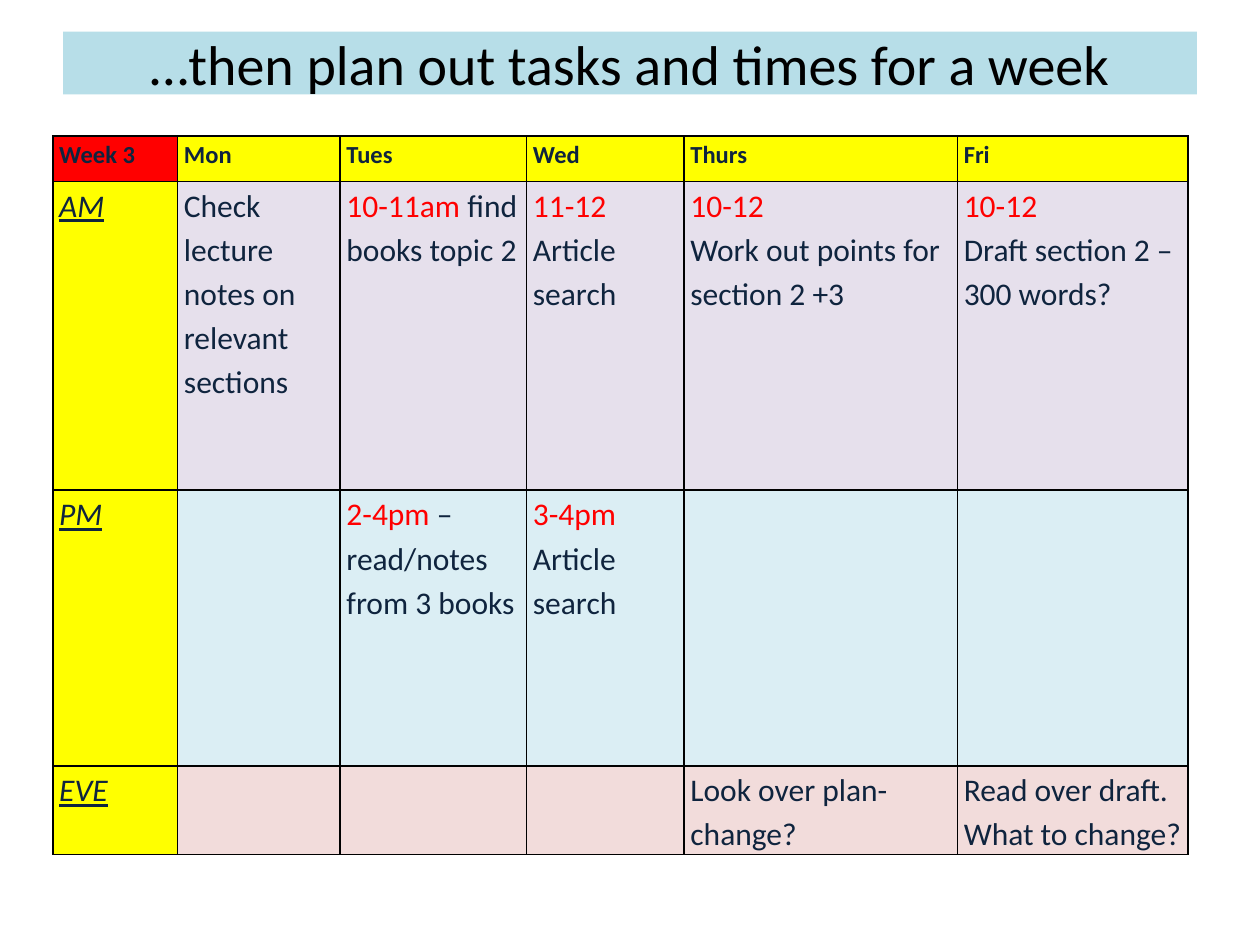
from dataclasses import dataclass

from lxml import etree
from pptx import Presentation
from pptx.dml.color import RGBColor
from pptx.enum import text
from pptx.oxml import ns
from pptx.util import Inches, Pt


@dataclass(frozen=True)
class Theme:
    font: str = "Calibri"
    title_size: int = 32
    head_size: int = 14
    body_size: int = 18
    border_width: int = 1
    title_fill: str = "B7DEE8"
    black: str = "000000"
    ink: str = "0F243E"
    time: str = "FF0000"
    corner: str = "FF0000"
    label: str = "FFFF00"
    morning: str = "E6E0EC"
    afternoon: str = "DBEEF4"
    evening: str = "F2DCDB"


theme = Theme()


def add_span(para, words, size=theme.body_size, color=theme.ink,
             bold=False, italic=False, underline=False):
    span = para.add_run()
    span.text = words
    font = span.font
    font.name = theme.font
    font.size = Pt(size)
    font.color.rgb = RGBColor.from_string(color)
    font.bold, font.italic, font.underline = bold, italic, underline


def add_borders(cell):
    """Draw all four sides; call before the fill, which must follow them in the XML."""
    properties = cell._tc.get_or_add_tcPr()
    for side in ("lnL", "lnR", "lnT", "lnB"):
        line = etree.SubElement(properties, ns.qn(f"a:{side}"),
                                w=str(Pt(theme.border_width)))
        fill = etree.SubElement(line, ns.qn("a:solidFill"))
        etree.SubElement(fill, ns.qn("a:srgbClr"), val=theme.black)


deck = Presentation()
deck.slide_width, deck.slide_height = Inches(10), Inches(7.5)
page = deck.slides.add_slide(deck.slide_layouts[5])

# Title
title = page.shapes.title
title.left, title.top = Inches(0.5), Inches(0.25)
title.width, title.height = Inches(9), Inches(0.5)
title.fill.solid()
title.fill.fore_color.rgb = RGBColor.from_string(theme.title_fill)
frame = title.text_frame
frame.auto_size = text.MSO_AUTO_SIZE.NONE
frame.vertical_anchor = text.MSO_ANCHOR.MIDDLE
frame.paragraphs[0].alignment = text.PP_ALIGN.CENTER
add_span(frame.paragraphs[0], "…then plan out tasks and times for a week",
         size=theme.title_size, color=theme.black)

# Week plan: a cell is a list of paragraphs, a paragraph is a (time, task) pair
days = ["Week 3", "Mon", "Tues", "Wed", "Thurs", "Fri"]
sessions = [
    ("AM", theme.morning, [
        [("", "Check lecture notes on relevant sections")],
        [("10-11am ", "find books topic 2")],
        [("11-12", ""), ("", "Article search")],
        [("10-12", ""), ("", "Work out points for section 2 +3")],
        [("10-12", ""), ("", "Draft section 2 – 300 words?")],
    ]),
    ("PM", theme.afternoon, [
        [],
        [("2-4pm ", "–read/notes from 3 books")],
        [("3-4pm", ""), ("", "Article search")],
        [],
        [],
    ]),
    ("EVE", theme.evening, [
        [],
        [],
        [],
        [("", "Look over plan-change?")],
        [("", "Read over draft."), ("", "What to change?")],
    ]),
]
column_widths = [0.99, 1.29, 1.48, 1.25, 2.17, 1.83]
row_heights = [0.36, 2.45, 2.19, 0.7]

plan = page.shapes.add_table(
    len(row_heights), len(column_widths), Inches(0.42), Inches(1.08),
    Inches(sum(column_widths)), Inches(sum(row_heights))).table
for column, width in zip(plan.columns, column_widths):
    column.width = Inches(width)
for row, height in zip(plan.rows, row_heights):
    row.height = Inches(height)

# Cell frames and fills
for row_index in range(len(row_heights)):
    for column_index in range(len(column_widths)):
        cell = plan.cell(row_index, column_index)
        cell.margin_left = cell.margin_right = Inches(0.05)
        cell.margin_top = cell.margin_bottom = 0
        add_borders(cell)
        if row_index == column_index == 0:
            color = theme.corner
        elif row_index == 0 or column_index == 0:
            color = theme.label
        else:
            color = sessions[row_index - 1][1]
        cell.fill.solid()
        cell.fill.fore_color.rgb = RGBColor.from_string(color)

# Cell text
for column_index, day in enumerate(days):
    para = plan.cell(0, column_index).text_frame.paragraphs[0]
    para.line_spacing = 1.15
    add_span(para, day, size=theme.head_size, bold=True)

for row_index, (session, _, entries) in enumerate(sessions, start=1):
    para = plan.cell(row_index, 0).text_frame.paragraphs[0]
    para.line_spacing = 1.15
    add_span(para, session, italic=True, underline=True)
    for column_index, entry in enumerate(entries, start=1):
        frame = plan.cell(row_index, column_index).text_frame
        for position, (time, task) in enumerate(entry):
            para = frame.add_paragraph() if position else frame.paragraphs[0]
            para.line_spacing = 1.15
            if time:
                add_span(para, time, color=theme.time)
            if task:
                add_span(para, task)

deck.save("out.pptx")
